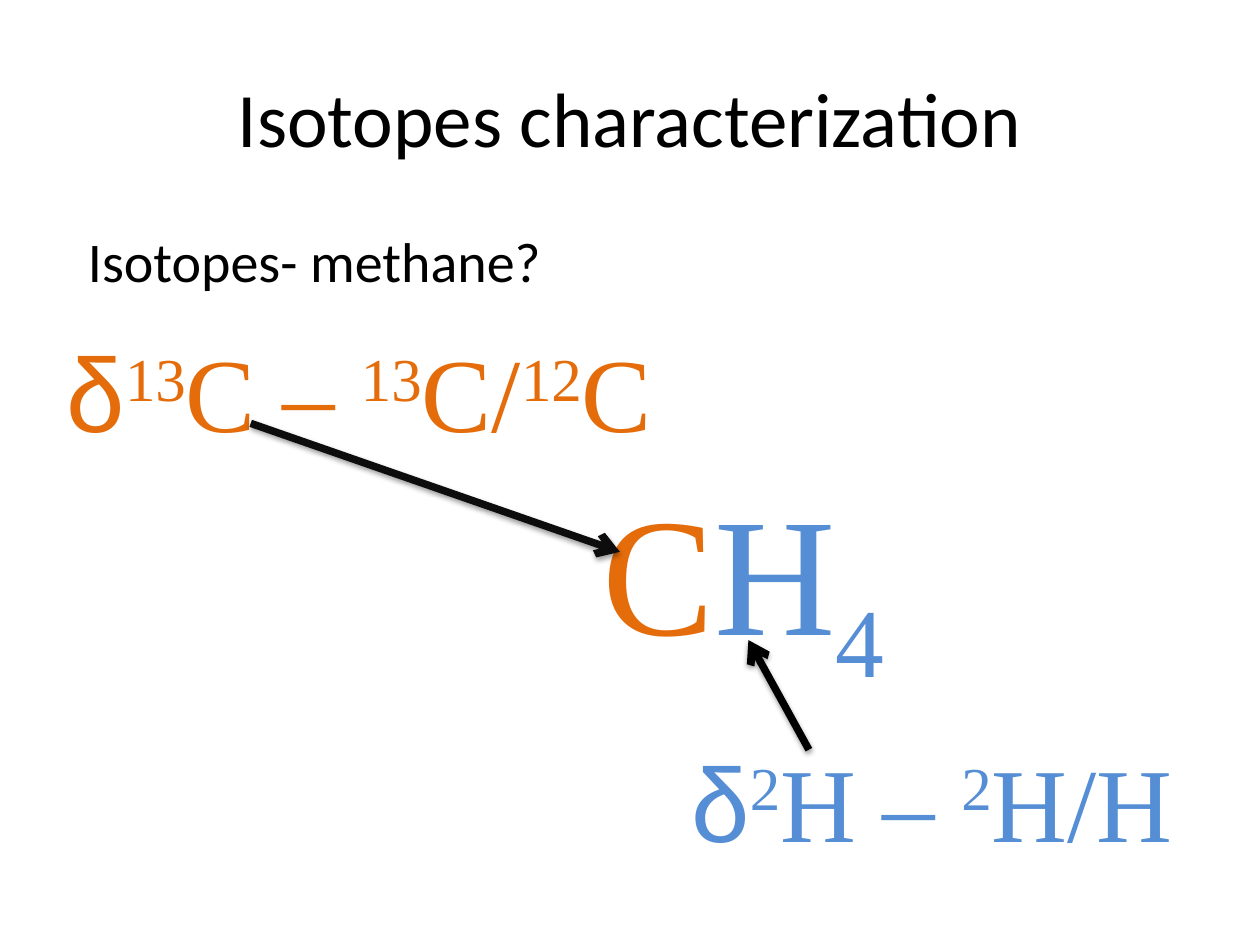
from dataclasses import dataclass

import lxml.etree
import pptx
import pptx.dml.color
import pptx.enum.shapes
import pptx.enum.text
import pptx.oxml
import pptx.oxml.ns
import pptx.util

ALIGN = pptx.enum.text.PP_ALIGN
ANCHOR = pptx.enum.text.MSO_ANCHOR


@dataclass(frozen=True)
class Theme:
    ink: str = "000000"
    soft_ink: str = "0D0D0D"
    carbon: str = "E46C0A"
    hydrogen: str = "558ED5"
    sans: str = "Calibri"
    greek: str = "Arial"
    serif: str = "Times New Roman"
    title: int = 44
    body: int = 32
    ratio: int = 60
    formula: int = 96
    arrow: float = 4.25


@dataclass(frozen=True)
class Run:
    text: str
    base: int = 0  # percent above (+) or below (-) the baseline
    font: str = ""
    color: str = ""


@dataclass(frozen=True)
class Label:
    box: tuple[float, float, float, float]  # column, row, columns, rows
    runs: tuple[Run, ...]
    size: int
    font: str = ""
    color: str = ""
    align: ALIGN = ALIGN.LEFT
    anchor: ANCHOR = ANCHOR.TOP
    wrap: bool = True


@dataclass(frozen=True)
class Arrow:
    start: tuple[float, float]
    end: tuple[float, float]
    color: str


T = Theme()
COLUMNS, ROWS = 100, 75
WIDTH, HEIGHT = pptx.util.Inches(10), pptx.util.Inches(7.5)


def x(columns: float) -> int:
    return round(WIDTH * columns / COLUMNS)


def y(rows: float) -> int:
    return round(HEIGHT * rows / ROWS)


def style(font, name: str, color: str) -> None:
    if name:
        font.name = name
    if color:
        font.color.rgb = pptx.dml.color.RGBColor.from_string(color)


def add_label(s, label: Label) -> None:
    left, top, width, height = label.box
    sp = s.shapes.add_textbox(x(left), y(top), x(width), y(height))
    tf = sp.text_frame
    tf.word_wrap = label.wrap
    tf.vertical_anchor = label.anchor
    p = tf.paragraphs[0]
    p.alignment = label.align
    p.font.size = pptx.util.Pt(label.size)
    style(p.font, label.font, label.color)
    for run in label.runs:
        r = p.add_run()
        r.text = run.text
        style(r.font, run.font, run.color)
        if run.base:
            r._r.get_or_add_rPr().set("baseline", str(run.base * 1000))


def add_arrow(s, arrow: Arrow) -> None:
    sp = s.shapes.add_connector(
        pptx.enum.shapes.MSO_CONNECTOR.STRAIGHT,
        x(arrow.start[0]), y(arrow.start[1]), x(arrow.end[0]), y(arrow.end[1]))
    sp.line.width = pptx.util.Pt(T.arrow)
    sp.line.color.rgb = pptx.dml.color.RGBColor.from_string(arrow.color)
    tail = lxml.etree.SubElement(sp.line._get_or_add_ln(), pptx.oxml.ns.qn("a:tailEnd"))
    tail.set("type", "arrow")
    # Soft shadow straight below the line
    sp._element.spPr.append(pptx.oxml.parse_xml(
        f'<a:effectLst {pptx.oxml.ns.nsdecls("a")}>'
        f'<a:outerShdw blurRad="{pptx.util.Pt(3.1)}" dist="{pptx.util.Pt(1.6)}" '
        'dir="5400000" rotWithShape="0">'
        f'<a:srgbClr val="{T.ink}"><a:alpha val="38000"/></a:srgbClr>'
        '</a:outerShdw></a:effectLst>'))


def ratio_runs(*parts: tuple[str, int]) -> tuple[Run, ...]:
    """A delta followed by serif parts, each with its baseline shift."""
    return (Run("δ", font=T.greek),) + tuple(
        Run(text, base, T.serif) for text, base in parts)


LABELS = (
    # Title and question
    Label((5, 3, 90, 12.5), (Run("Isotopes characterization"),), T.title,
          T.sans, T.ink, ALIGN.CENTER, ANCHOR.MIDDLE),
    Label((6, 17.5, 89, 6.5), (Run("Isotopes- methane?"),), T.body, T.sans, T.ink),
    # Carbon ratio, methane formula, hydrogen ratio
    Label((4.3, 25.5, 52.2, 11.1),
          ratio_runs(("13", 30), ("C – ", 0), ("13", 30), ("C/", 0), ("12", 30), ("C", 0)),
          T.ratio, color=T.carbon),
    Label((46.8, 36.6, 25.2, 17.2),
          (Run("C", color=T.carbon), Run("H", color=T.hydrogen),
           Run("4", -25, color=T.hydrogen)),
          T.formula, T.serif, wrap=False),
    Label((53.9, 58, 40.8, 11.1),
          ratio_runs(("2", 30), ("H – ", 0), ("2", 30), ("H/H", 0)),
          T.ratio, color=T.hydrogen, wrap=False),
)

# From each ratio to its atom
ARROWS = (
    Arrow((19.9, 33.6), (49.2, 43.8), T.soft_ink),
    Arrow((64.2, 59.5), (59.4, 50.8), T.ink),
)


def main() -> None:
    prs = pptx.Presentation()
    prs.slide_width, prs.slide_height = WIDTH, HEIGHT
    s = prs.slides.add_slide(prs.slide_layouts[6])
    for label in LABELS:
        add_label(s, label)
    for arrow in ARROWS:
        add_arrow(s, arrow)
    prs.save("out.pptx")


if __name__ == "__main__":
    main()
